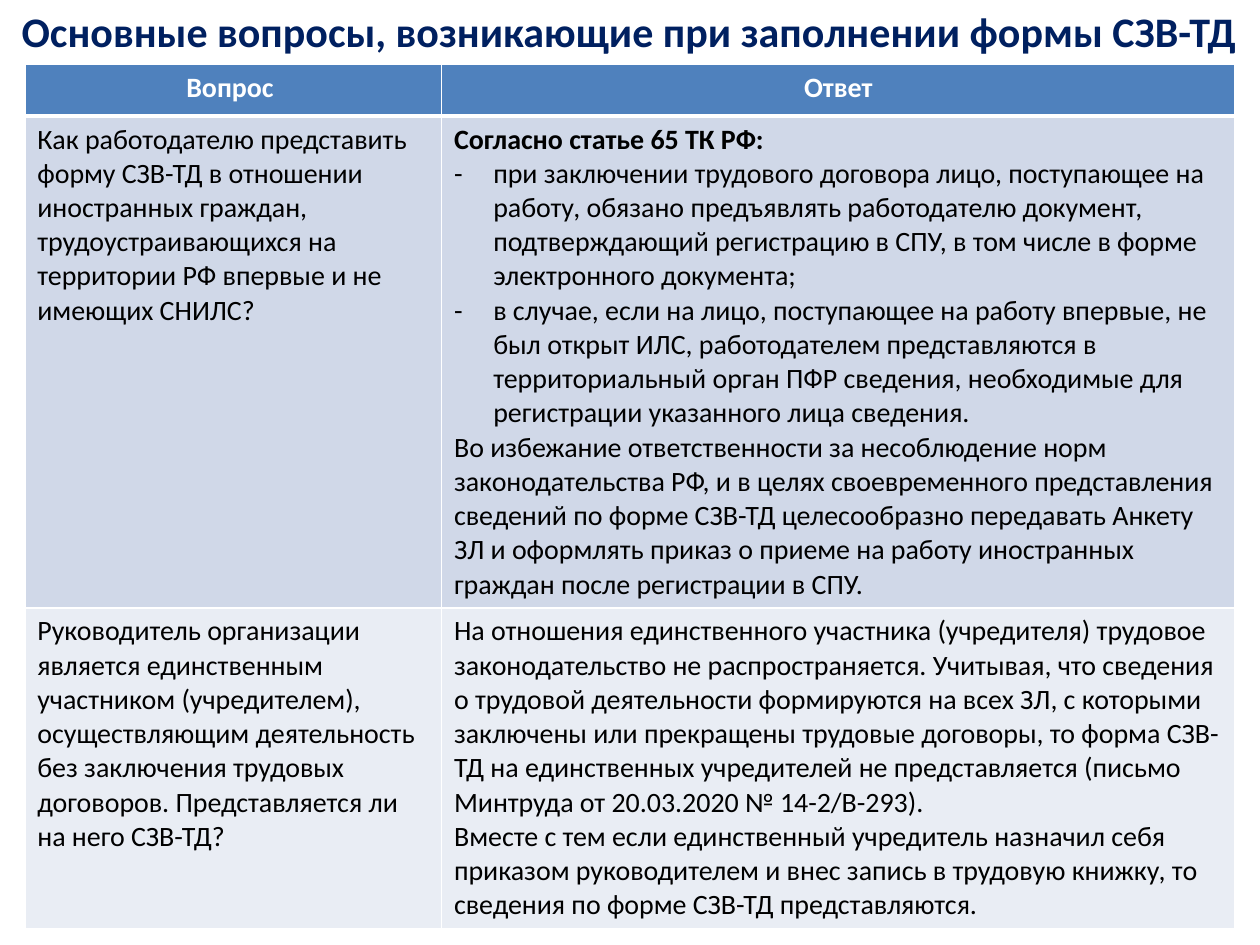
"""Build a slide with a table of questions and answers about the СЗВ-ТД form."""
from lxml import etree
from pptx import Presentation
from pptx import util as u
from pptx.dml.color import RGBColor
from pptx.enum import text
from pptx.oxml.ns import qn

NAVY = RGBColor(0x00, 0x20, 0x60)
BLUE = RGBColor(0x4F, 0x81, 0xBD)
BAND = RGBColor(0xD0, 0xD8, 0xE8)
PALE = RGBColor(0xE9, 0xED, 0xF4)
WHITE = RGBColor(0xFF, 0xFF, 0xFF)
BLACK = RGBColor(0x00, 0x00, 0x00)
NO_STYLE = "{2D5ABB26-0587-4C30-8999-92F81FD0307C}"

LEFT, CENTER = text.PP_ALIGN.LEFT, text.PP_ALIGN.CENTER


def write(p, content, size=16, color=BLACK, bold=False, align=LEFT, bullet=None):
    p.alignment = align
    r = p.add_run()
    r.text = content
    r.font.name = "Calibri"
    r.font.size = u.Pt(size)
    r.font.bold = bold
    r.font.color.rgb = color
    if bullet:
        pPr = p._p.get_or_add_pPr()
        pPr.set("marL", str(u.Cm(0.79)))
        pPr.set("indent", str(-u.Cm(0.79)))
        etree.SubElement(pPr, qn("a:buFont")).set("typeface", "Calibri")
        etree.SubElement(pPr, qn("a:buChar")).set("char", bullet)


def border(cell, side, points):
    ln = etree.SubElement(cell._tc.get_or_add_tcPr(), qn("a:ln" + side))
    ln.set("w", str(u.Pt(points)))
    fill = etree.SubElement(ln, qn("a:solidFill"))
    etree.SubElement(fill, qn("a:srgbClr")).set("val", str(WHITE))


HEAD = {"color": WHITE, "bold": True, "align": CENTER}
DASH = {"bullet": "-"}

ROWS = [
    (1.04, BLUE, [[("Вопрос ", HEAD)], [("Ответ", HEAD)]]),
    (6.37, BAND, [
        [("Как работодателю представить форму СЗВ-ТД в отношении иностранных граждан, "
          "трудоустраивающихся на территории РФ впервые и не имеющих СНИЛС?", {})],
        [("Согласно статье 65 ТК РФ:", {"bold": True}),
         ("при заключении трудового договора лицо, поступающее на работу, обязано "
          "предъявлять работодателю документ, подтверждающий регистрацию в СПУ, "
          "в том числе в форме электронного документа;", DASH),
         ("в случае, если на лицо, поступающее на работу впервые, не был открыт ИЛС, "
          "работодателем представляются в территориальный орган ПФР сведения, "
          "необходимые для регистрации указанного лица сведения.", DASH),
         ("Во избежание ответственности за несоблюдение норм законодательства РФ, "
          "и в целях своевременного представления сведений по форме СЗВ-ТД "
          "целесообразно передавать Анкету ЗЛ и оформлять приказ о приеме на работу "
          "иностранных граждан после регистрации в СПУ.", {})],
    ]),
    (3.66, PALE, [
        [("Руководитель организации является единственным участником (учредителем), "
          "осуществляющим деятельность без заключения трудовых договоров. "
          "Представляется ли на него СЗВ-ТД?", {})],
        [("На отношения единственного участника (учредителя) трудовое законодательство "
          "не распространяется. Учитывая, что сведения о трудовой деятельности "
          "формируются на всех ЗЛ, с которыми заключены или прекращены трудовые "
          "договоры, то форма СЗВ-ТД на единственных учредителей не представляется "
          "(письмо Минтруда от 20.03.2020 № 14-2/В-293).", {}),
         ("Вместе с тем если единственный учредитель назначил себя приказом "
          "руководителем и внес запись в трудовую книжку, то сведения по форме "
          "СЗВ-ТД представляются.", {})],
    ]),
]

prs = Presentation()
prs.slide_width, prs.slide_height = u.Cm(25.4), u.Cm(19.05)
s = prs.slides.add_slide(prs.slide_layouts[6])

frame = s.shapes.add_table(len(ROWS), 2, u.Cm(0.5), u.Cm(1.3), u.Cm(24.4), u.Cm(17.15))
table = frame.table
for column, width in zip(table.columns, (8.4, 16)):
    column.width = u.Cm(width)

for row, (height, fill, contents) in zip(table.rows, ROWS):
    row.height = u.Cm(height)
    for cell, paragraphs in zip(row.cells, contents):
        for side in "LRTB":
            border(cell, side, 3 if fill == BLUE and side == "B" else 1)
        cell.fill.solid()
        cell.fill.fore_color.rgb = fill
        tf = cell.text_frame
        for i, (content, style) in enumerate(paragraphs):
            p = tf.add_paragraph() if i else tf.paragraphs[0]
            write(p, content, **style)
frame.height = u.Cm(17.15)

title = s.shapes.add_table(1, 1, u.Cm(0.13), u.Cm(0.03), u.Cm(25.1), u.Cm(1.8)).table
title.first_row = title.horz_banding = False
title._tbl.tblPr.find(qn("a:tableStyleId")).text = NO_STYLE
cell = title.cell(0, 0)
cell.fill.background()
write(cell.text_frame.paragraphs[0], "Основные вопросы, возникающие при заполнении формы СЗВ-ТД",
      size=24, color=NAVY, bold=True, align=CENTER)

prs.save("out.pptx")
